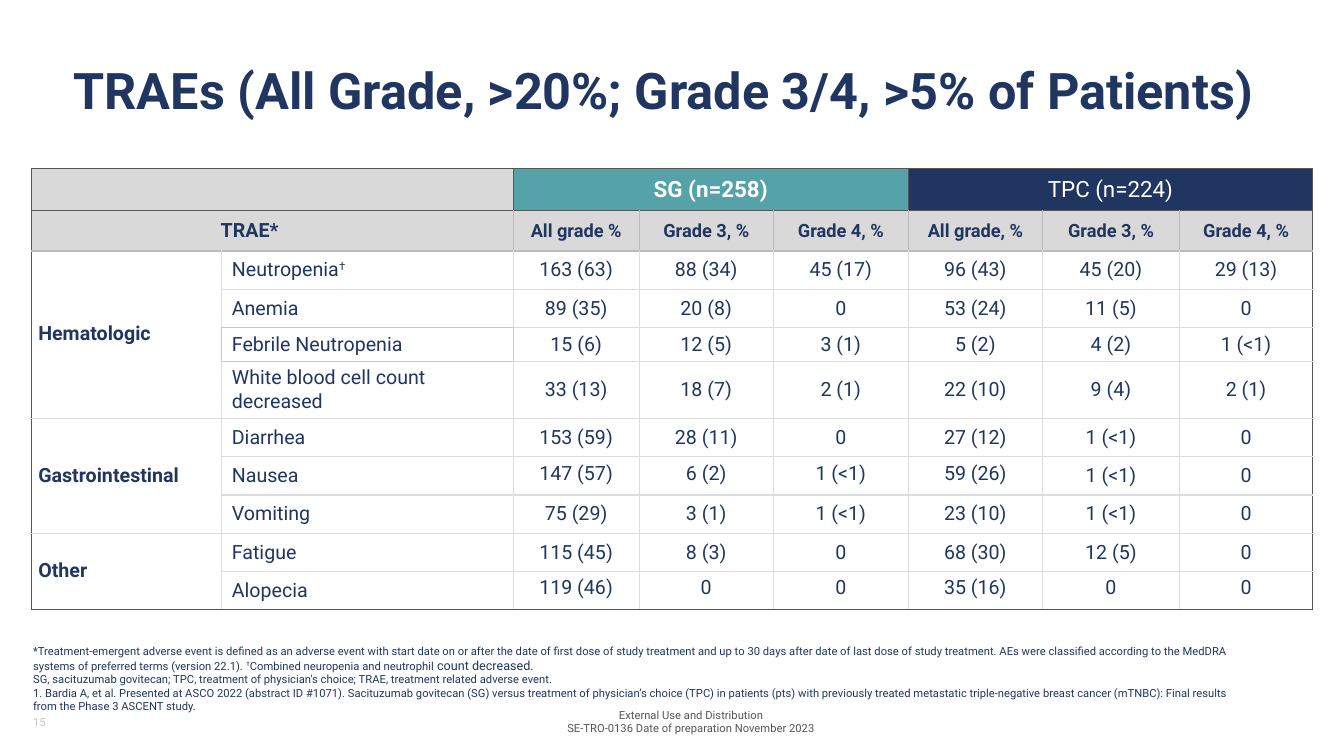
from pptx import Presentation
from pptx import util as u
from pptx.dml import color
from pptx.enum import text
from pptx.oxml import ns
from lxml import etree

HUES = {"navy": "203661", "teal": "55A2A8", "white": "FFFFFF", "band": "D9D9D9",
        "dark": "54565B", "mid": "B9BBBF", "light": "DCDDDF", "grey": "C6CAC6"}
FONT = "Roboto"
WIDE, HIGH = 13.33, 7.5
COLS = [1.89, 2.89, 1.25, 1.33, 1.34, 1.33, 1.36, 1.32]
ROWS = [0.42, 0.4, 0.38, 0.38, 0.33, 0.56] + [0.38] * 5
GRADES = ["Grade 3, %", "Grade 4, %"]
DATA = [
    ["", "", "SG (n=258)", "", "", "TPC (n=224)", "", ""],
    ["TRAE*", "", "All grade %", *GRADES, "All grade, %", *GRADES],
    ["Hematologic", "Neutropenia†", "163 (63)", "88 (34)", "45 (17)", "96 (43)", "45 (20)", "29 (13)"],
    ["", "Anemia", "89 (35)", "20 (8)", "0", "53 (24)", "11 (5)", "0"],
    ["", "Febrile Neutropenia", "15 (6)", "12 (5)", "3 (1)", "5 (2)", "4 (2)", "1 (<1)"],
    ["", "White blood cell count decreased", "33 (13)", "18 (7)", "2 (1)", "22 (10)", "9 (4)", "2 (1)"],
    ["Gastrointestinal", "Diarrhea", "153 (59)", "28 (11)", "0", "27 (12)", "1 (<1)", "0"],
    ["", "Nausea", "147 (57)", "6 (2)", "1 (<1)", "59 (26)", "1 (<1)", "0"],
    ["", "Vomiting", "75 (29)", "3 (1)", "1 (<1)", "23 (10)", "1 (<1)", "0"],
    ["Other", "Fatigue", "115 (45)", "8 (3)", "0", "68 (30)", "12 (5)", "0"],
    ["", "Alopecia", "119 (46)", "0", "0", "35 (16)", "0", "0"],
]
SPANS = [(0, 0, 0, 1), (0, 2, 0, 4), (0, 5, 0, 7), (1, 0, 1, 1),
         (2, 0, 5, 0), (6, 0, 8, 0), (9, 0, 10, 0)]
RAISED = {7: range(2, 6), 10: range(2, 8)}
NOTES = [
    [("*Treatment-emergent adverse event is defined as an adverse event with start date on or "
      "after the date of first dose of study treatment and up to 30 days after date of last dose "
      "of study treatment. AEs were classified according to the MedDRA systems of preferred terms "
      "(version 22.1). ", 8), ("†", 8), ("Combined neuropenia and neutrophil ", 8),
     ("count decreased.", 9)],
    [("SG, sacituzumab govitecan; TPC, treatment of physician's choice; TRAE, treatment related "
      "adverse event.", 8)],
    [("1. Bardia A, et al. Presented at ASCO 2022 (abstract ID #1071). Sacituzumab govitecan (SG) "
      "versus treatment of physician’s choice (TPC) in patients (pts) with previously treated "
      "metastatic triple-negative breast cancer (mTNBC): Final results from the Phase 3 ASCENT "
      "study.", 8)],
]


def tint(name):
    return color.RGBColor.from_string(HUES[name])


def write(para, parts, hue, bold=False):
    for words, size in parts:
        run = para.add_run()
        run.text = words
        font = run.font
        font.name, font.size, font.bold = FONT, u.Pt(size), bold
        font.color.rgb = tint(hue)
        if words == "†":
            font._element.set("baseline", "30000")


def label(slide, box, paras, hue, align, anchor):
    shape = slide.shapes.add_textbox(*map(u.Inches, box))
    frame = shape.text_frame
    frame.word_wrap = True
    frame.vertical_anchor = anchor
    for i, parts in enumerate(paras):
        para = frame.add_paragraph() if i else frame.paragraphs[0]
        para.alignment = align
        write(para, parts, hue)


def head(slide):
    title = slide.shapes.title
    title.left, title.top = u.Inches(0.63), u.Inches(0.4)
    title.width, title.height = u.Inches(12), u.Inches(1.08)
    frame = title.text_frame
    frame.auto_size = text.MSO_AUTO_SIZE.NONE
    frame.vertical_anchor = text.MSO_ANCHOR.MIDDLE
    para = frame.paragraphs[0]
    para.alignment, para.line_spacing = text.PP_ALIGN.LEFT, 0.8
    write(para, [("TRAEs (All Grade, >20%; Grade 3/4, >5% of Patients)", 36)], "navy", True)


def across(line, col):
    if line in (0, 1, len(ROWS)):
        return "dark"
    if line == 2:
        return "mid"
    return "grey" if col == 1 and line in (4, 5) else "light"


def down(line, row):
    if row == 0 or line in (0, len(COLS)):
        return "dark"
    if row == 1:
        return "mid"
    return "grey" if row == 4 and line in (1, 2) else "light"


def edge(cell, row, col):
    tall, wide = (cell.span_height, cell.span_width) if cell.is_merge_origin else (1, 1)
    sides = {"L": down(col, row), "R": down(col + wide, row),
             "T": across(row, col), "B": across(row + tall, col)}
    if cell.is_spanned:
        keep = "LR" if col == 0 else "TB"
        sides = {side: sides[side] for side in keep}
    props = cell._tc.get_or_add_tcPr()
    for i, (side, hue) in enumerate(sides.items()):
        line = etree.Element(ns.qn("a:ln" + side), w="12700")
        fill = etree.SubElement(line, ns.qn("a:solidFill"))
        etree.SubElement(fill, ns.qn("a:srgbClr"), val=HUES[hue])
        props.insert(i, line)


def style(row, col):
    if row == 0 and col > 1:
        return ("teal", "white", 16, True) if col < 5 else ("navy", "white", 16, False)
    if row < 2:
        return "band", "navy", 14 if col == 0 else 13, True
    return "white", "navy", 14, col == 0


def fill(cell, row, col):
    back, ink, size, bold = style(row, col)
    cell.fill.solid()
    cell.fill.fore_color.rgb = tint(back)
    top = col in RAISED.get(row, ())
    cell.vertical_anchor = text.MSO_ANCHOR.TOP if top else text.MSO_ANCHOR.MIDDLE
    para = cell.text_frame.paragraphs[0]
    words = DATA[row][col]
    if col > 1:
        para.alignment = text.PP_ALIGN.CENTER
    elif col == 0 and words:
        cell.margin_left = cell.margin_top = cell.margin_bottom = u.Inches(0.07)
        cell.margin_right = u.Inches(0.13)
        para.line_spacing, para.space_after = 0.9, u.Pt(3)
        if row == 1:
            props = para._p.get_or_add_pPr()
            props.set("marL", str(u.Inches(1.75)))
            props.set("indent", str(u.Inches(0.06)))
    if words.endswith("†"):
        write(para, [(words[:-1], size), ("†", size)], ink, bold)
    elif words:
        write(para, [(words, size)], ink, bold)


def grid(slide):
    box = map(u.Inches, (0.31, 1.67, sum(COLS), sum(ROWS)))
    table = slide.shapes.add_table(len(ROWS), len(COLS), *box).table
    table.first_row = table.horz_banding = False
    for col, width in zip(table.columns, COLS):
        col.width = u.Inches(width)
    for row, height in zip(table.rows, ROWS):
        row.height = u.Inches(height)
    for top, left, low, right in SPANS:
        table.cell(top, left).merge(table.cell(low, right))
    for r in range(len(ROWS)):
        for c in range(len(COLS)):
            cell = table.cell(r, c)
            fill(cell, r, c)
            edge(cell, r, c)


def main():
    deck = Presentation()
    deck.slide_width, deck.slide_height = u.Inches(WIDE), u.Inches(HIGH)
    slide = deck.slides.add_slide(deck.slide_layouts[5])
    mid, left = text.MSO_ANCHOR.MIDDLE, text.PP_ALIGN.LEFT
    label(slide, (5.14, 7, 3.43, 0.32),
          [[("External Use and Distribution", 8)],
           [("SE-TRO-0136 Date of preparation November 2023", 8)]],
          "dark", text.PP_ALIGN.CENTER, mid)
    head(slide)
    label(slide, (0.23, 7, 3, 0.32), [[("15", 8)]], "grey", left, mid)
    grid(slide)
    label(slide, (0.23, 6.34, 12.29, 0.93), NOTES, "navy", left, text.MSO_ANCHOR.TOP)
    deck.save("out.pptx")


if __name__ == "__main__":
    main()
